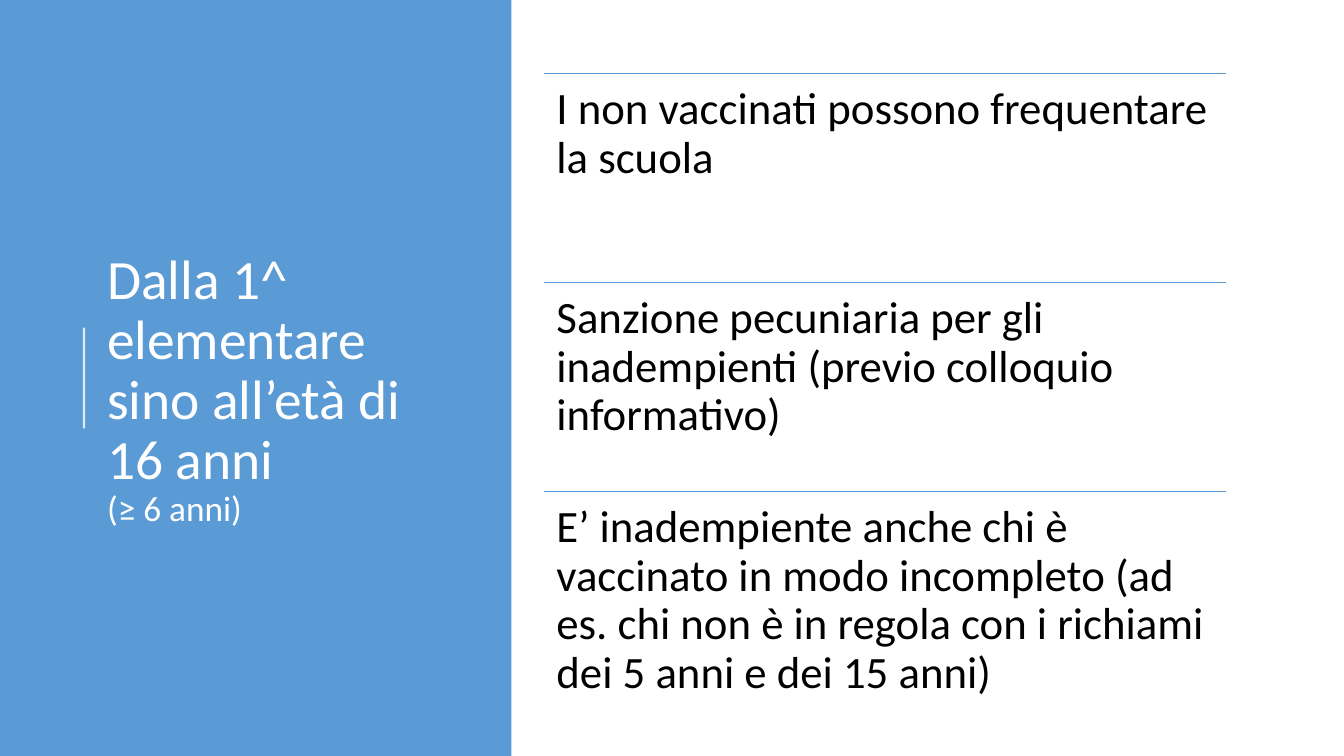
from pptx import Presentation
from pptx.dml.color import RGBColor as RGB
from pptx.enum.shapes import MSO_CONNECTOR as CONNECTOR, MSO_SHAPE as SHAPE
from pptx.enum.text import MSO_ANCHOR as ANCHOR
from pptx.oxml.ns import qn
from pptx.util import Pt
from lxml.etree import SubElement

PX = 9525  # EMU per px, 96 px to the inch
THEME = {
    "font": "Calibri",
    "blue": RGB(0x5B, 0x9B, 0xD5),
    "white": RGB(0xFF, 0xFF, 0xFF),
    "black": RGB(0, 0, 0),
    "title": Pt(39.6),
    "age": Pt(25.2),
    "rule": Pt(32),
}

deck = Presentation()
deck.slide_width, deck.slide_height = 1280 * PX, 720 * PX
slide = deck.slides.add_slide(deck.slide_layouts[6])


def add_line(x1, y1, x2, y2, color, width):
    line = slide.shapes.add_connector(
        CONNECTOR.STRAIGHT, x1 * PX, y1 * PX, x2 * PX, y2 * PX)
    line.line.color.rgb = color
    line.line.width = Pt(width)
    SubElement(line._element.spPr, qn("a:effectLst"))
    return line


def add_text(x, y, w, h, lines, color, anchor, inset_x, inset_y):
    frame = slide.shapes.add_textbox(x * PX, y * PX, w * PX, h * PX).text_frame
    frame.word_wrap = True
    frame.vertical_anchor = anchor
    frame.margin_left = frame.margin_right = inset_x * PX
    frame.margin_top = frame.margin_bottom = inset_y * PX
    paragraph = frame.paragraphs[0]
    paragraph.line_spacing = 0.9
    for index, (words, size) in enumerate(lines):
        if index:
            paragraph.add_line_break()
        run = paragraph.add_run()
        run.text = words
        run.font.name = THEME["font"]
        run.font.size = size
        run.font.color.rgb = color


# Blue panel on the left
panel = slide.shapes.add_shape(SHAPE.RECTANGLE, 0, 0, 487 * PX, 720 * PX)
panel.shadow.inherit = False
panel.fill.solid()
panel.fill.fore_color.rgb = THEME["blue"]
panel.line.fill.background()

# Translucent accent beside the title
accent = add_line(80, 312, 80, 408, THEME["white"], 1.5)
accent_color = accent.line._ln.find(".//" + qn("a:srgbClr"))
SubElement(accent_color, qn("a:alpha"), val="80000")

# Title
add_text(92, 227, 354, 290,
         [("Dalla 1^ elementare sino all’età di 16 anni", THEME["title"]),
          ("(≥ 6 anni)", THEME["age"])],
         THEME["white"], ANCHOR.MIDDLE, 10, 5)

# Rules, each under its own line
RULES = [
    "I non vaccinati possono frequentare la scuola",
    "Sanzione pecuniaria per gli inadempienti (previo colloquio informativo)",
    "E’ inadempiente anche chi è vaccinato in modo incompleto (ad es. chi non è "
    "in regola con i richiami dei 5 anni e dei 15 anni)",
]
LEFT, TOP, WIDTH, STEP = 518, 70, 650, 199
for row, rule in enumerate(RULES):
    y = TOP + row * STEP
    add_line(LEFT, y, LEFT + WIDTH, y, THEME["blue"], 1)
    add_text(LEFT, y, WIDTH, STEP, [(rule, THEME["rule"])],
             THEME["black"], ANCHOR.TOP, 12, 12)

deck.save("out.pptx")
